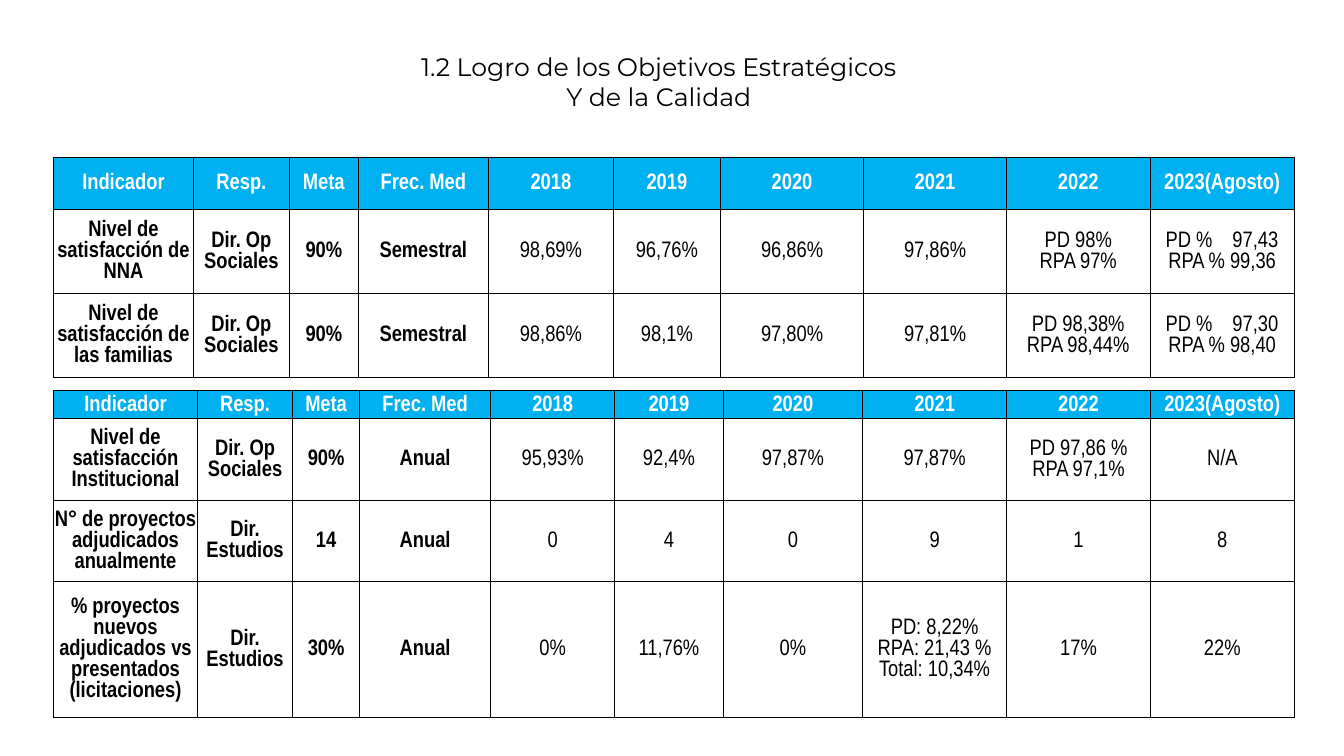
from dataclasses import dataclass

from lxml import etree
from pptx import Presentation
from pptx.dml.color import RGBColor
from pptx.enum.text import MSO_ANCHOR, MSO_AUTO_SIZE, PP_ALIGN
from pptx.oxml.ns import qn
from pptx.util import Pt

CENTER = PP_ALIGN.CENTER
LEFT = PP_ALIGN.LEFT
MIDDLE = MSO_ANCHOR.MIDDLE
NO_AUTOFIT = MSO_AUTO_SIZE.NONE
TITLE_ONLY = 5


@dataclass(frozen=True)
class Theme:
    """Colours, fonts and sizes of the slide."""

    header_fill: str = "00B0F0"
    white: str = "FFFFFF"
    black: str = "000000"
    title_font: str = "Montserrat"
    table_font: str = "Arial Narrow"
    title_size: int = 18
    table_size: int = 16
    border: int = 1


THEME = Theme()
TABLE_LEFT = 38.2
BOLD_COLUMNS = 4
INSET = 0.7
TABBED_INSET = 11
TAB_STOP = 80.5

TITLE = "1.2 Logro de los Objetivos Estratégicos\nY de la Calidad"
HEADER = ["Indicador", "Resp.", "Meta", "Frec. Med", "2018", "2019",
          "2020", "2021", "2022", "2023(Agosto)"]

SEMESTRAL_WIDTHS = [100, 68.5, 49.3, 92.9, 89.3, 76.4, 102.5, 101.8, 102.8, 102.8]
SEMESTRAL_HEIGHTS = [37.5, 60, 60]
SEMESTRAL_ROWS = [
    ["Nivel de satisfacción de NNA", "Dir. Op Sociales", "90%", "Semestral",
     "98,69%", "96,76%", "96,86%", "97,86%", "PD 98%\nRPA 97%",
     "PD %\t97,43\nRPA % 99,36"],
    ["Nivel de satisfacción de las familias", "Dir. Op Sociales", "90%", "Semestral",
     "98,86%", "98,1%", "97,80%", "97,81%", "PD 98,38%\nRPA 98,44%",
     "PD %\t97,30\nRPA % 98,40"],
]

ANNUAL_WIDTHS = [102.9, 67.9, 47.9, 93.6, 88.6, 77.5, 99.6, 102.9, 102.7, 102.7]
ANNUAL_HEIGHTS = [20, 58.2, 58.2, 96.7]
ANNUAL_ROWS = [
    ["Nivel de satisfacción Institucional", "Dir. Op Sociales", "90%", "Anual",
     "95,93%", "92,4%", "97,87%", "97,87%", "PD 97,86 %\nRPA 97,1%", "N/A"],
    ["N° de proyectos adjudicados anualmente", "Dir. Estudios", "14", "Anual",
     "0", "4", "0", "9", "1", "8"],
    ["% proyectos nuevos adjudicados vs presentados (licitaciones)",
     "Dir. Estudios", "30%", "Anual", "0%", "11,76%", "0%",
     "PD: 8,22%\vRPA: 21,43 %\vTotal: 10,34%", "17%", "22%"],
]


def style_paragraph(paragraph, font_name, size, color, bold=False):
    """Centre a paragraph and set its font."""
    paragraph.alignment = CENTER
    font = paragraph.font
    font.name = font_name
    font.size = Pt(size)
    font.bold = bold
    font.color.rgb = RGBColor.from_string(color)


def add_right_tab(paragraph, position):
    """Give a paragraph one right-aligned tab stop."""
    tabs = etree.SubElement(paragraph._p.get_or_add_pPr(), qn("a:tabLst"))
    etree.SubElement(tabs, qn("a:tab"), pos=str(Pt(position)), algn="r")


def add_borders(cell):
    """Draw a solid line on all four sides of a cell."""
    properties = cell._tc.get_or_add_tcPr()
    for index, side in enumerate(("a:lnL", "a:lnR", "a:lnT", "a:lnB")):
        line = etree.Element(qn(side), w=str(Pt(THEME.border)))
        fill = etree.SubElement(line, qn("a:solidFill"))
        etree.SubElement(fill, qn("a:srgbClr"), val=THEME.black)
        properties.insert(index, line)


def fill_cell(cell, text, is_header, bold):
    """Write and format one table cell."""
    cell.text = text
    cell.vertical_anchor = MIDDLE
    cell.margin_left = cell.margin_right = Pt(TABBED_INSET if "\t" in text else INSET)
    cell.margin_top = Pt(INSET)
    cell.margin_bottom = Pt(0)
    cell.fill.solid()
    cell.fill.fore_color.rgb = RGBColor.from_string(
        THEME.header_fill if is_header else THEME.white)
    color = THEME.white if is_header else THEME.black
    for paragraph, line in zip(cell.text_frame.paragraphs, text.split("\n")):
        if "\t" in line:
            add_right_tab(paragraph, TAB_STOP)
        style_paragraph(paragraph, THEME.table_font, THEME.table_size, color, bold)
        if "\t" in line:
            paragraph.alignment = LEFT
    add_borders(cell)


def add_indicator_table(slide, top, widths, heights, rows):
    """Add a table of indicators under the common header."""
    table = slide.shapes.add_table(
        len(heights), len(widths), Pt(TABLE_LEFT), Pt(top),
        Pt(sum(widths)), Pt(sum(heights))).table
    table.first_row = False
    table.horz_banding = False
    for column, width in zip(table.columns, widths):
        column.width = Pt(width)
    for row, height in zip(table.rows, heights):
        row.height = Pt(height)
    for row_index, texts in enumerate([HEADER] + rows):
        is_header = row_index == 0
        for column_index, text in enumerate(texts):
            bold = is_header or column_index < BOLD_COLUMNS
            fill_cell(table.cell(row_index, column_index), text, is_header, bold)


def set_title(slide):
    """Place and format the slide title."""
    title = slide.shapes.title
    title.left, title.top, title.width, title.height = (
        Pt(178.6), Pt(28.8), Pt(584), Pt(58.3))
    frame = title.text_frame
    frame.text = TITLE
    frame.word_wrap = True
    frame.auto_size = NO_AUTOFIT
    frame.vertical_anchor = MIDDLE
    for paragraph in frame.paragraphs:
        style_paragraph(paragraph, THEME.title_font, THEME.title_size, THEME.black)


def main():
    """Build the slide and save it."""
    presentation = Presentation()
    presentation.slide_width = Pt(960)
    presentation.slide_height = Pt(540)
    slide = presentation.slides.add_slide(presentation.slide_layouts[TITLE_ONLY])
    set_title(slide)
    add_indicator_table(slide, 112.3, SEMESTRAL_WIDTHS, SEMESTRAL_HEIGHTS, SEMESTRAL_ROWS)
    add_indicator_table(slide, 279.2, ANNUAL_WIDTHS, ANNUAL_HEIGHTS, ANNUAL_ROWS)
    presentation.save("out.pptx")


if __name__ == "__main__":
    main()
